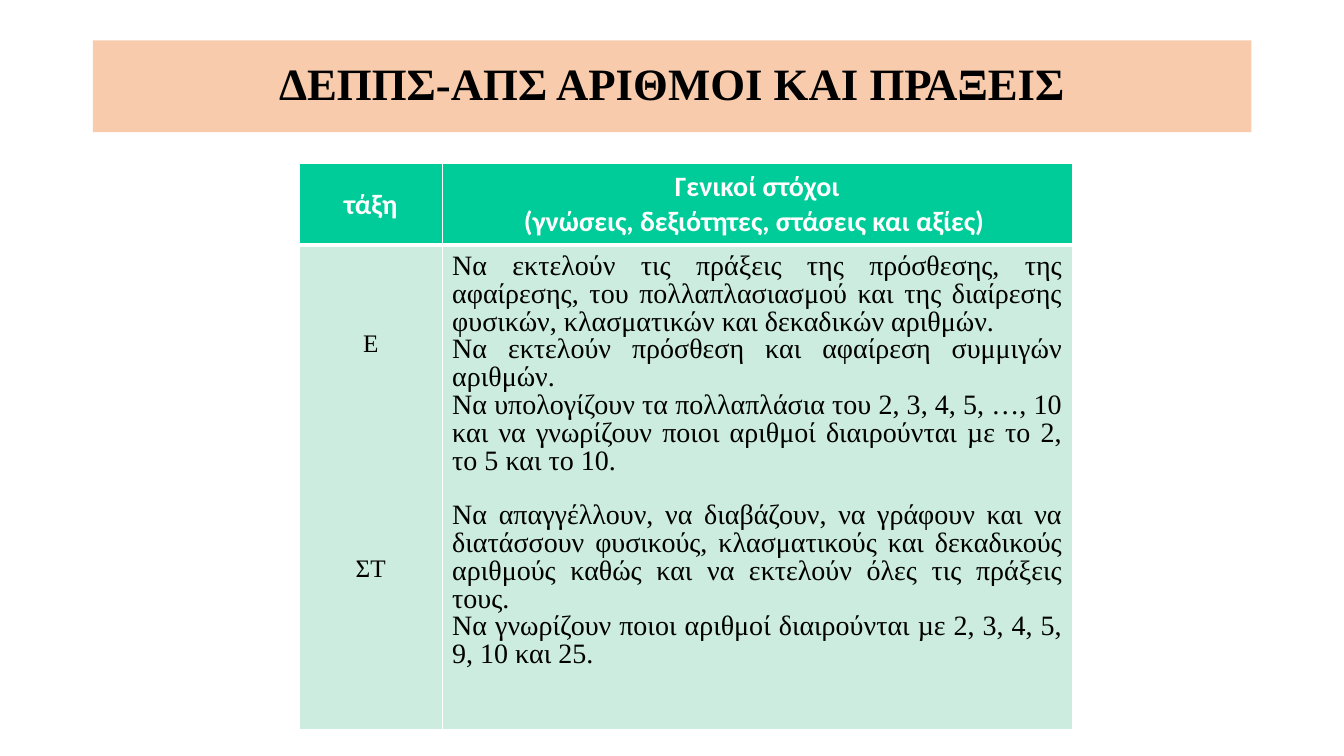
from dataclasses import dataclass

from lxml.etree import SubElement as Sub
from pptx import Presentation
from pptx.dml.color import RGBColor as Rgb
from pptx.enum.shapes import MSO_SHAPE as Kind
from pptx.enum.text import MSO_ANCHOR as Anchor, PP_ALIGN as Align
from pptx.oxml.ns import qn
from pptx.util import Cm, Pt

SERIF = "Times New Roman"
THIN, THICK = 0.91, 2.95


@dataclass
class Box:
    lines: list[str]
    fill: str
    size: int
    align: Align = Align.CENTER
    anchor: Anchor = Anchor.MIDDLE
    font: str = SERIF
    ink: str = "000000"
    bold: bool = False
    space: float = 0.9
    inset: float = 0.13
    wide: int = -1
    gap: int = 0


def paint(fill, tone: str) -> None:
    fill.solid()
    fill.fore_color.rgb = Rgb.from_string(tone)


def write(par, text: str, *, size: int, font: str, ink: str, bold: bool,
          align: Align, space: float, gap: int) -> None:
    par.text = text
    par.alignment = align
    par.line_spacing = space
    par.space_before = Pt(gap)
    par.space_after = Pt(0)
    for run in par.runs:
        run.font.size = Pt(size)
        run.font.name = font
        run.font.bold = bold
        run.font.color.rgb = Rgb.from_string(ink)


def fill_text(frame, box: Box) -> None:
    frame.word_wrap = True
    for i, text in enumerate(box.lines):
        par = frame.add_paragraph() if i else frame.paragraphs[0]
        write(par, text, size=box.size, font=box.font, ink=box.ink,
              bold=box.bold, align=box.align, space=box.space,
              gap=box.gap if i == box.wide else 0)


def edge(cell, top: float, base: float) -> None:
    props = cell._tc.get_or_add_tcPr()
    sides = {"a:lnL": THIN, "a:lnR": THIN, "a:lnT": top, "a:lnB": base}
    for tag, width in sides.items():
        line = Sub(props, qn(tag), w=str(Pt(width)))
        Sub(Sub(line, qn("a:solidFill")), qn("a:srgbClr"), val="FFFFFF")


def draw_cell(cell, box: Box, top: float, base: float) -> None:
    edge(cell, top, base)
    paint(cell.fill, box.fill)
    cell.vertical_anchor = box.anchor
    cell.margin_left = cell.margin_right = Cm(0.25)
    cell.margin_top, cell.margin_bottom = Cm(box.inset), Cm(0.13)
    fill_text(cell.text_frame, box)


def draw_title(slide, box: Box) -> None:
    bar = slide.shapes.add_shape(
        Kind.RECTANGLE, Cm(2.34), Cm(1.02), Cm(29.21), Cm(2.31))
    bar.shadow.inherit = False
    bar.line.fill.background()
    paint(bar.fill, box.fill)
    bar.text_frame.vertical_anchor = box.anchor
    fill_text(bar.text_frame, box)


def draw_table(slide, rows: list[list[Box]]) -> None:
    wide, high = [3.61, 15.88], [1.98, 12.22]
    table = slide.shapes.add_table(
        len(high), len(wide), Cm(7.54), Cm(4.11),
        Cm(sum(wide)), Cm(sum(high))).table
    table.horz_banding = False
    for col, width in zip(table.columns, wide):
        col.width = Cm(width)
    for row, height in zip(table.rows, high):
        row.height = Cm(height)
    edges = [(THIN, THICK), (THICK, THIN)]
    for r, (boxes, (top, base)) in enumerate(zip(rows, edges)):
        for c, box in enumerate(boxes):
            draw_cell(table.cell(r, c), box, top, base)


def head(text: str) -> Box:
    return Box([text], "00CC99", 20, font="Calibri", ink="FFFFFF",
               bold=True, space=1.04)


def body(lines: list[str], size: int, align: Align, inset: float,
         wide: int, gap: int) -> Box:
    return Box(lines, "CBECDE", size, align, Anchor.TOP,
               inset=inset, wide=wide, gap=gap)


GOALS = [
    "Να εκτελούν τις πράξεις της πρόσθεσης, της αφαίρεσης, του "
    "πολλαπλασιασμού και της διαίρεσης φυσικών, κλασματικών και "
    "δεκαδικών αριθμών.",
    "Να εκτελούν πρόσθεση και αφαίρεση συμμιγών αριθμών.",
    "Να υπολογίζουν τα πολλαπλάσια του 2, 3, 4, 5, …, 10 και να "
    "γνωρίζουν ποιοι αριθμοί διαιρούνται µε το 2, το 5 και το 10. ",
    "Να απαγγέλλουν, να διαβάζουν, να γράφουν και να διατάσσουν "
    "φυσικούς, κλασματικούς και δεκαδικούς αριθμούς καθώς και να "
    "εκτελούν όλες τις πράξεις τους.",
    "Να γνωρίζουν ποιοι αριθμοί διαιρούνται µε 2, 3, 4, 5, 9, 10 και 25.",
]


def main() -> None:
    deck = Presentation()
    deck.slide_width, deck.slide_height = Cm(33.88), Cm(19.05)
    slide = deck.slides.add_slide(deck.slide_layouts[6])
    draw_title(slide, Box(["ΔΕΠΠΣ-ΑΠΣ ΑΡΙΘΜΟΙ ΚΑΙ ΠΡΑΞΕΙΣ"],
                          "F8CBAD", 32, bold=True))
    draw_table(slide, [
        [head("τάξη"),
         head("Γενικοί στόχοι\v(γνώσεις, δεξιότητες, στάσεις και αξίες) ")],
        [body(["Ε", "ΣΤ"], 18, Align.CENTER, 2.2, 1, 143),
         body(GOALS, 20, Align.JUSTIFY, 0.2, 3, 18)],
    ])
    deck.save("out.pptx")


if __name__ == "__main__":
    main()
